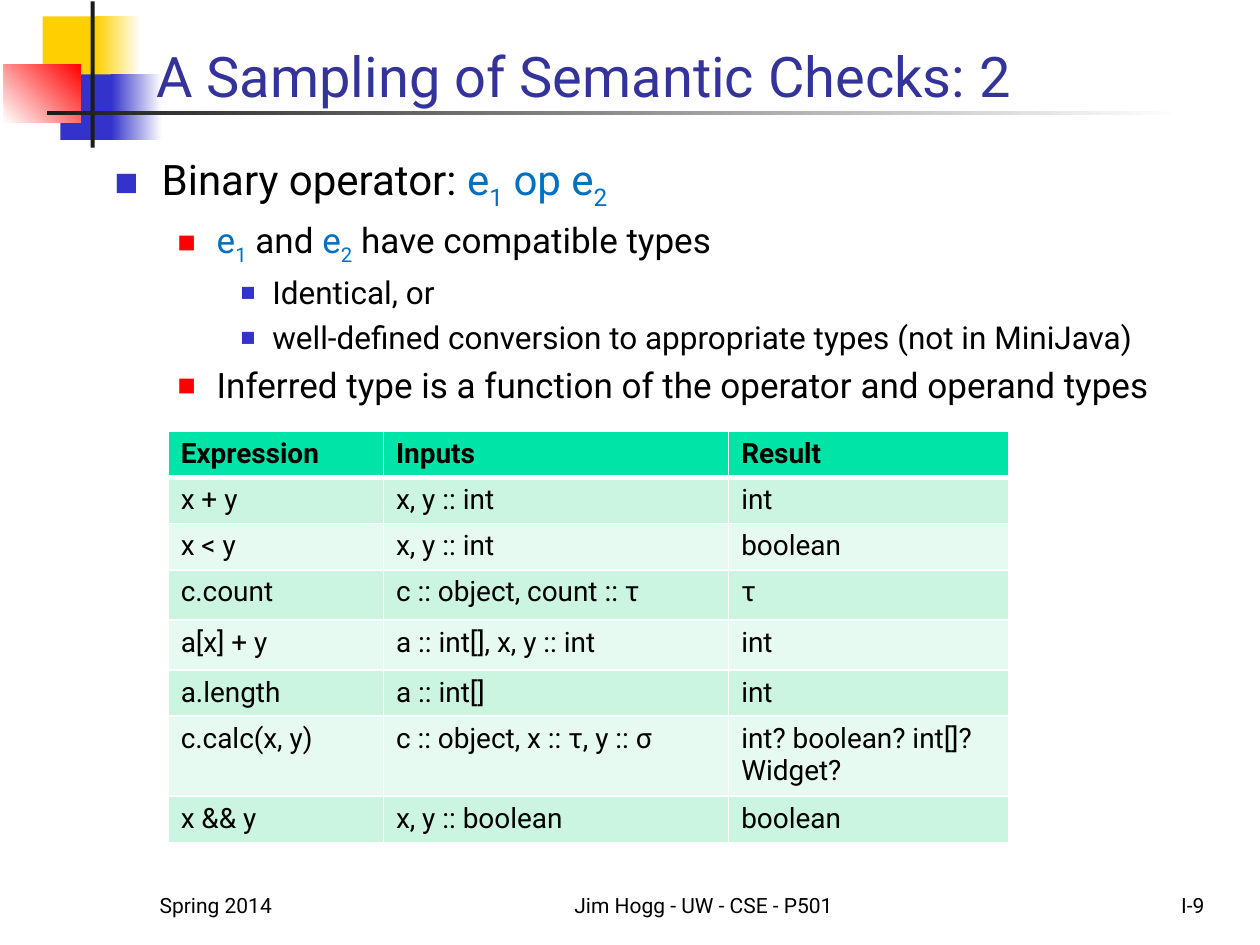
from pptx import Presentation
from pptx.dml.color import RGBColor
from pptx.enum.shapes import MSO_SHAPE as Shape
from pptx.enum.text import MSO_ANCHOR as Anchor, PP_ALIGN as Align
from pptx.oxml import parse_xml
from pptx.oxml.ns import nsdecls
from pptx.util import Cm, Pt

COLORS = {
    "white": "FFFFFF", "black": "000000", "ink": "1C1C1C",
    "yellow": "FFCF01", "blue": "3333CC", "red": "FF0000",
    "title": "333399", "code": "0070C0",
    "header": "00E4A8", "band": "CCF5E1", "pale": "E7FAF1",
}
# Per outline level: text size, left margin, hanging indent (cm), bullet colour, bullet %
LEVELS = [
    (24, 0.95, 0.95, "blue", 60),
    (20, 2.06, 0.79, "red", 55),
    (18, 3.18, 0.64, "blue", 50),
]


def rgb(name):
    return RGBColor.from_string(COLORS[name])


class SlideBuilder:
    font_name = "Roboto"

    def __init__(self, slide):
        self.slide = slide

    def style(self, font, size, color="black", bold=False):
        font.name, font.size, font.bold = self.font_name, Pt(size), bold
        font.color.rgb = rgb(color)

    def block(self, box, color, fade_to=None, angle=0):
        """Rectangle with a solid fill, or a gradient when fade_to is given."""
        rect = self.slide.shapes.add_shape(Shape.RECTANGLE, *map(Cm, box))
        rect.shadow.inherit = False
        rect.line.fill.background()
        if fade_to is None:
            rect.fill.solid()
            rect.fill.fore_color.rgb = rgb(color)
            return
        rect.fill.gradient()
        rect.fill.gradient_angle = angle
        for stop, name in zip(rect.fill.gradient_stops, (color, fade_to)):
            stop.color.rgb = rgb(name)

    def frame(self, box, anchor):
        frame = self.slide.shapes.add_textbox(*map(Cm, box)).text_frame
        frame.word_wrap = True
        frame.vertical_anchor = anchor
        return frame

    def text(self, box, words, size, color="black", align=Align.LEFT):
        line = self.frame(box, Anchor.BOTTOM).paragraphs[0]
        line.text, line.alignment = words, align
        self.style(line.font, size, color)

    def outline(self, box, items):
        """Bulleted list; each item is a level and its (words, kind) pieces."""
        frame = self.frame(box, Anchor.TOP)
        for number, (level, pieces) in enumerate(items):
            item = frame.add_paragraph() if number else frame.paragraphs[0]
            size, margin, hang, bullet_color, bullet_size = LEVELS[level]
            item.level = level
            item.space_before = Pt(round(size * 0.22, 1))
            self.style(item.font, size)
            self.bullet(item, margin, hang, bullet_color, bullet_size)
            for words, kind in pieces:
                run = item.add_run()
                run.text = words
                self.style(run.font, size, "black" if kind == "plain" else "code")
                if kind == "sub":
                    run._r.get_or_add_rPr().set("baseline", "-25000")

    def bullet(self, item, margin, hang, color, percent):
        props = item._p.get_or_add_pPr()
        props.set("marL", str(Cm(margin)))
        props.set("indent", str(-Cm(hang)))
        ns = nsdecls("a")
        for part in (
            f'<a:buClr {ns}><a:srgbClr val="{COLORS[color]}"/></a:buClr>',
            f'<a:buSzPct {ns} val="{percent * 1000}"/>',
            f'<a:buFont {ns} typeface="{self.font_name}"/>',
            f'<a:buChar {ns} char="■"/>',
        ):
            # Bullet settings precede the default run properties
            props.insert_element_before(parse_xml(part), "a:defRPr")

    def table(self, left, top, widths, heights, rows):
        grid = self.slide.shapes.add_table(
            len(rows), len(widths), Cm(left), Cm(top),
            Cm(sum(widths)), Cm(sum(heights))).table
        for column, width in zip(grid.columns, widths):
            column.width = Cm(width)
        for r, (height, row) in enumerate(zip(heights, rows)):
            grid.rows[r].height = Cm(height)
            fill = "header" if r == 0 else ("pale", "band")[r % 2]
            for c, words in enumerate(row):
                cell = grid.cell(r, c)
                cell.text = words
                self.style(cell.text_frame.paragraphs[0].font, 16, bold=r == 0)
                self.borders(cell, top=3 if r == 1 else 1, bottom=3 if r == 0 else 1)
                cell.fill.solid()
                cell.fill.fore_color.rgb = rgb(fill)

    def borders(self, cell, top, bottom):
        props = cell._tc.get_or_add_tcPr()
        for side, width in (("L", 1), ("R", 1), ("T", top), ("B", bottom)):
            props.append(parse_xml(
                f'<a:ln{side} {nsdecls("a")} w="{Pt(width)}"><a:solidFill>'
                f'<a:srgbClr val="{COLORS["white"]}"/></a:solidFill></a:ln{side}>'))


def main():
    deck = Presentation()
    deck.slide_width, deck.slide_height = Cm(25.4), Cm(19.05)
    page = SlideBuilder(deck.slides.add_slide(deck.slide_layouts[6]))

    # Corner ornament and title rule
    page.block((0.86, 0.33, 1.22, 1.32), "yellow")
    page.block((1.93, 0.33, 0.91, 1.32), "yellow", "white")
    page.block((1.22, 1.5, 1.17, 1.32), "blue")
    page.block((2.24, 1.5, 1.02, 1.32), "blue", "white")
    page.block((0.08, 1.3, 1.55, 1.17), "white", "red", angle=45)
    page.block((1.83, 0.03, 0.08, 2.95), "ink")
    page.block((0.94, 2.24, 22.86, 0.08), "ink", "white")

    # Footer
    footer_top, footer_height = 17.35, 1.27
    for left, width, words, align in (
        (2.97, 5.28, "Spring 2014", Align.LEFT),
        (10.16, 8.05, "Jim Hogg - UW - CSE - P501", Align.CENTER),
        (19.25, 5.28, "I-9", Align.RIGHT),
    ):
        page.text((left, footer_top, width, footer_height), words, 12, align=align)

    # Title and outline
    page.text((2.9, 0.58, 21.64, 1.73), "A Sampling of Semantic Checks: 2", 32, "title")
    page.outline((2.06, 2.97, 22.43, 5.08), [
        (0, [("Binary operator: ", "plain"), ("e", "code"), ("1", "sub"),
             (" op e", "code"), ("2", "sub")]),
        (1, [("e", "code"), ("1", "sub"), (" and ", "plain"), ("e", "code"),
             ("2", "sub"), (" have compatible types", "plain")]),
        (2, [("Identical, or", "plain")]),
        (2, [("well-defined conversion to appropriate types (not in MiniJava)", "plain")]),
        (1, [("Inferred type is a function of the operator and operand types", "plain")]),
    ])

    # Type rules
    line, tall, double = 0.91, 1.01, 1.58
    page.table(
        3.39, 8.69, (4.34, 6.96, 5.64),
        (line, line, line, tall, tall, line, double, line),
        [
            ("Expression", "Inputs", "Result"),
            ("x + y", "x, y :: int", "int"),
            ("x < y", "x, y :: int", "boolean"),
            ("c.count", "c :: object, count :: τ", "τ"),
            ("a[x] + y", "a :: int[], x, y :: int", "int"),
            ("a.length", "a :: int[]", "int"),
            ("c.calc(x, y)", "c :: object, x :: τ, y :: σ", "int? boolean? int[]? Widget?"),
            ("x && y", "x, y :: boolean", "boolean"),
        ])

    deck.save("out.pptx")


if __name__ == "__main__":
    main()
